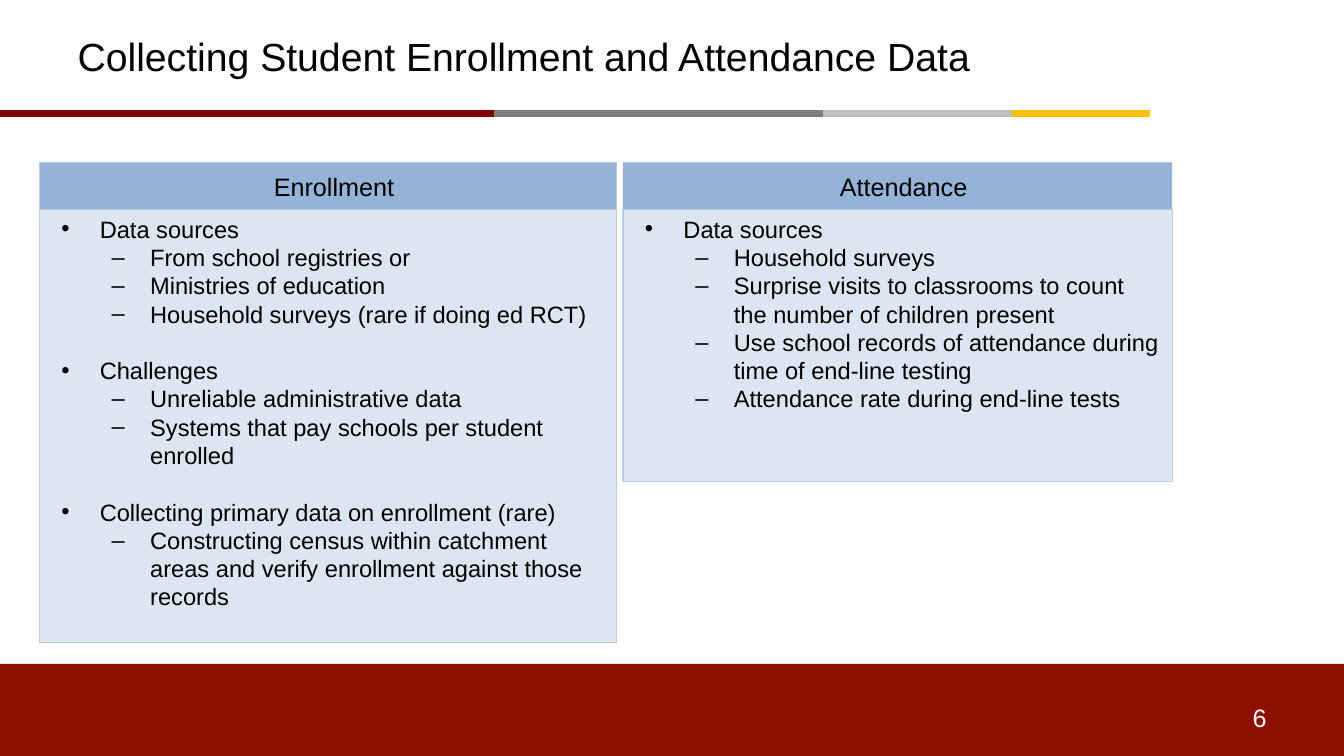
from lxml import etree
from pptx import Presentation
from pptx.dml.color import RGBColor
from pptx.enum.shapes import MSO_CONNECTOR, MSO_SHAPE
from pptx.enum.text import MSO_ANCHOR, MSO_AUTO_SIZE, PP_ALIGN
from pptx.oxml.ns import qn
from pptx.util import Cm, Pt

MIDDLE, TOP = MSO_ANCHOR.MIDDLE, MSO_ANCHOR.TOP
LEFT, CENTER = PP_ALIGN.LEFT, PP_ALIGN.CENTER
NO_AUTOFIT = MSO_AUTO_SIZE.NONE
STRAIGHT = MSO_CONNECTOR.STRAIGHT

BLACK = RGBColor(0x00, 0x00, 0x00)
WHITE = RGBColor(0xFF, 0xFF, 0xFF)
FOOTER_RED = RGBColor(0x8E, 0x10, 0x00)
HEADING_BLUE = RGBColor(0x95, 0xB3, 0xD7)
PANEL_BLUE = RGBColor(0xDC, 0xE6, 0xF2)
BORDER_BLUE = RGBColor(0xB9, 0xCD, 0xE5)
MAROON = RGBColor(0x80, 0x00, 0x00)
DARK_GRAY = RGBColor(0x7F, 0x7F, 0x7F)
LIGHT_GRAY = RGBColor(0xBF, 0xBF, 0xBF)
GOLD = RGBColor(0xFF, 0xC0, 0x00)

TITLE = "Collecting Student Enrollment and Attendance Data"
PAGE_NUMBER = "6"
# Each column: heading, left, width, panel height (cm), list of (topic, points)
COLUMNS = [
    ("Enrollment", 0.99, 14.55, 10.92, [
        ("Data sources", [
            "From school registries or",
            "Ministries of education",
            "Household surveys (rare if doing ed RCT)",
        ]),
        ("Challenges", [
            "Unreliable administrative data",
            "Systems that pay schools per student enrolled",
        ]),
        ("Collecting primary data on enrollment (rare)", [
            "Constructing census within catchment areas and verify "
            "enrollment against those records",
        ]),
    ]),
    ("Attendance", 15.7, 13.84, 6.86, [
        ("Data sources", [
            "Household surveys",
            "Surprise visits to classrooms to count the number of children present",
            "Use school records of attendance during time of end-line testing",
            "Attendance rate during end-line tests",
        ]),
    ]),
]
# Colour and right end (cm) of each part of the rule below the title
RULE_PARTS = [(MAROON, 12.45), (DARK_GRAY, 20.73), (LIGHT_GRAY, 25.5), (GOLD, 28.98)]
RULE_TOP = 2.86
HEADING_TOP, HEADING_HEIGHT = 4.09, 1.19
LINE_PITCH = Pt(20.2)
# Bullet and left margin for each list level
LEVELS = [("•", Cm(1.27)), ("–", Cm(2.54))]
HANGING = Cm(0.97)


def place(shape, left, top, width, height):
    shape.left, shape.top = Cm(left), Cm(top)
    shape.width, shape.height = Cm(width), Cm(height)


def fill(shape, color):
    shape.fill.solid()
    shape.fill.fore_color.rgb = color


def set_font(paragraph, size, color=BLACK):
    for run in paragraph.runs:
        run.font.name = "Arial"
        run.font.size = Pt(size)
        run.font.bold = False
        run.font.color.rgb = color


def set_line(shape, text, size, alignment, anchor, color=BLACK):
    """Put one line of formatted text into a shape."""
    frame = shape.text_frame
    frame.text = text
    frame.word_wrap = True
    frame.auto_size = NO_AUTOFIT
    frame.vertical_anchor = anchor
    paragraph = frame.paragraphs[0]
    paragraph.alignment = alignment
    paragraph.space_before = Pt(0)
    set_font(paragraph, size, color)


def add_bullet(paragraph, level):
    character, margin = LEVELS[level]
    paragraph.level = level
    properties = paragraph._p.get_or_add_pPr()
    properties.set("marL", str(margin))
    properties.set("indent", str(-HANGING))
    color = etree.SubElement(properties, qn("a:buClr"))
    etree.SubElement(color, qn("a:srgbClr"), val=str(BLACK))
    etree.SubElement(properties, qn("a:buFont"), typeface="Arial")
    etree.SubElement(properties, qn("a:buChar"), char=character)


def fill_panel(panel, topics):
    """Write the topics and their points as a two-level list."""
    frame = panel.text_frame
    frame.auto_size = NO_AUTOFIT
    frame.vertical_anchor = TOP
    items = [(text, level)
             for topic, points in topics
             for text, level in [(topic, 0)] + [(point, 1) for point in points]]
    for index, (text, level) in enumerate(items):
        paragraph = frame.add_paragraph() if index else frame.paragraphs[0]
        paragraph.text = text
        add_bullet(paragraph, level)
        paragraph.line_spacing = LINE_PITCH
        paragraph.space_before = LINE_PITCH if index and level == 0 else Pt(0)
        set_font(paragraph, 16.9)


def add_rule(slide):
    start = 0
    for color, end in RULE_PARTS:
        part = slide.shapes.add_connector(
            STRAIGHT, Cm(start), Cm(RULE_TOP), Cm(end), Cm(RULE_TOP))
        part.line.color.rgb = color
        part.line.width = Pt(5.5)
        etree.SubElement(part._element.spPr, qn("a:effectLst"))
        start = end


def add_footer(slide):
    band = slide.shapes.add_shape(
        MSO_SHAPE.RECTANGLE, 0, Cm(16.73), Cm(33.87), Cm(2.32))
    band.shadow.inherit = False
    fill(band, FOOTER_RED)
    band.line.fill.background()
    number = slide.shapes.add_textbox(Cm(31.32), Cm(17.58), Cm(1.63), Cm(1.02))
    set_line(number, PAGE_NUMBER, 18, LEFT, TOP, WHITE)


def main():
    presentation = Presentation()
    presentation.slide_width, presentation.slide_height = Cm(33.87), Cm(19.05)
    comparison_layout = presentation.slide_layouts[4]
    slide = presentation.slides.add_slide(comparison_layout)
    add_footer(slide)
    add_rule(slide)

    title = slide.shapes.title
    place(title, 1.7, 0.1, 30.48, 2.62)
    set_line(title, TITLE, 28, LEFT, MIDDLE)

    for index, (name, left, width, height, topics) in enumerate(COLUMNS):
        heading = slide.placeholders[1 + 2 * index]
        panel = slide.placeholders[2 + 2 * index]
        place(heading, left, HEADING_TOP, width, HEADING_HEIGHT)
        fill(heading, HEADING_BLUE)
        set_line(heading, name, 18, CENTER, MIDDLE)
        heading.text_frame.margin_left = Cm(0.56)

        place(panel, left, HEADING_TOP + HEADING_HEIGHT, width, height)
        fill(panel, PANEL_BLUE)
        panel.line.color.rgb = BORDER_BLUE
        panel.line.width = Pt(0.75)
        fill_panel(panel, topics)

    presentation.save("out.pptx")


if __name__ == "__main__":
    main()
